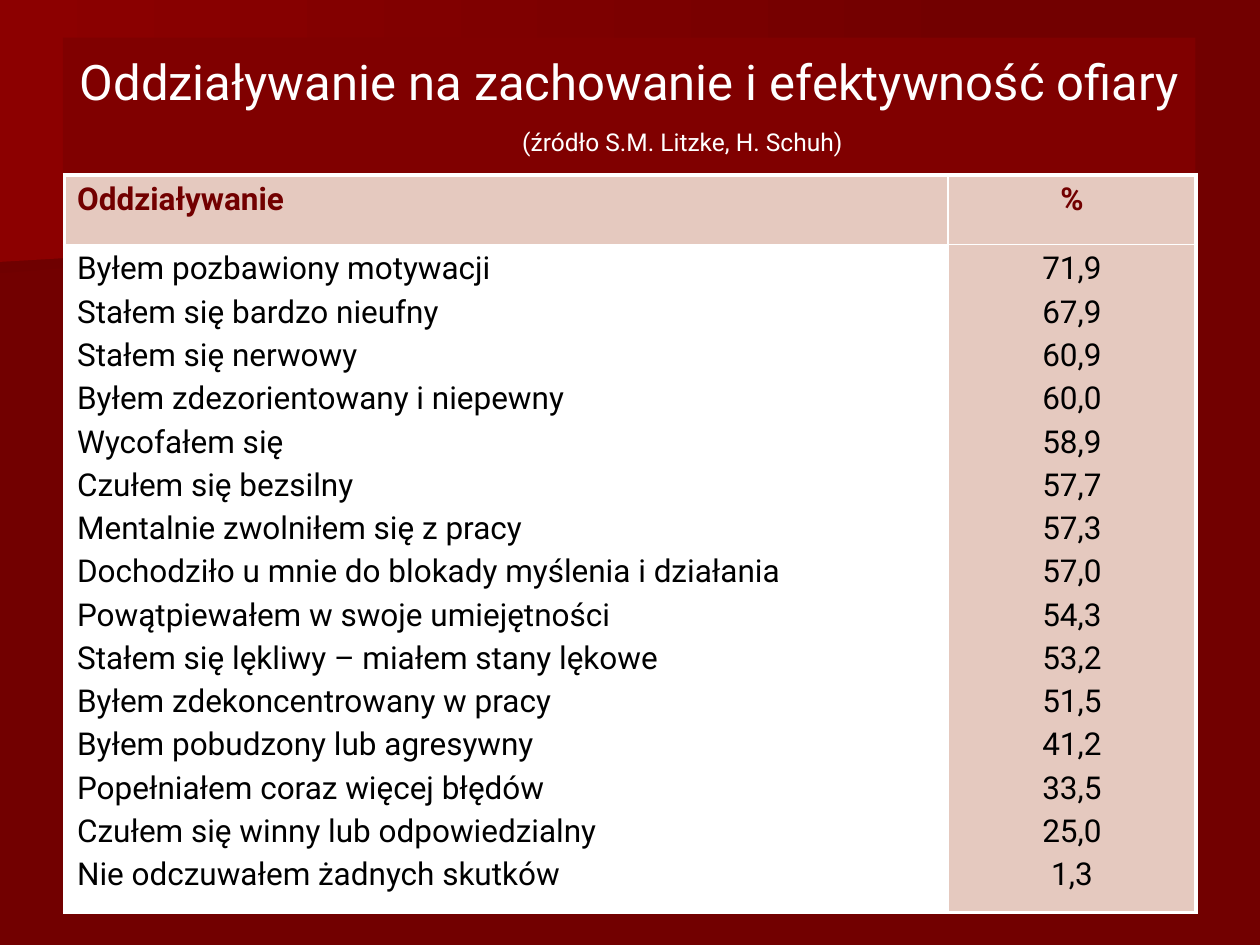
"""Build a slide with a table of effects on a victim's behaviour."""
from dataclasses import dataclass

from lxml import etree
from pptx import Presentation
from pptx.dml.color import RGBColor
from pptx.enum.text import MSO_ANCHOR, PP_ALIGN
from pptx.oxml.ns import qn
from pptx.util import Cm, Pt

LEFT, CENTER = PP_ALIGN.LEFT, PP_ALIGN.CENTER
MIDDLE = MSO_ANCHOR.MIDDLE
FONT = "Roboto"
WHITE, BLACK, DARK_RED, TITLE_RED, PINK = "FFFFFF", "000000", "720000", "800000", "E5C9BF"
THIN, THICK = 1, 2.25
BLANK_LAYOUT = 6
COLUMN_WIDTHS = (17.81, 5.0)
ROW_HEIGHTS = (1.4, 13.2)

EFFECTS = (
    ("Byłem pozbawiony motywacji", "71,9"),
    ("Stałem się bardzo nieufny", "67,9"),
    ("Stałem się nerwowy", "60,9"),
    ("Byłem zdezorientowany i niepewny", "60,0"),
    ("Wycofałem się", "58,9"),
    ("Czułem się bezsilny", "57,7"),
    ("Mentalnie zwolniłem się z pracy", "57,3"),
    ("Dochodziło u mnie do blokady myślenia i działania", "57,0"),
    ("Powątpiewałem w swoje umiejętności", "54,3"),
    ("Stałem się lękliwy – miałem stany lękowe", "53,2"),
    ("Byłem zdekoncentrowany w pracy", "51,5"),
    ("Byłem pobudzony lub agresywny", "41,2"),
    ("Popełniałem coraz więcej błędów", "33,5"),
    ("Czułem się winny lub odpowiedzialny", "25,0"),
    ("Nie odczuwałem żadnych skutków", "1,3"),
)


@dataclass(frozen=True)
class Band:
    """A background outline in centimetres with a horizontal gradient."""
    points: tuple
    colors: tuple


@dataclass(frozen=True)
class TextStyle:
    """The look of one paragraph."""
    size: float
    color: str
    bold: bool = False
    align: PP_ALIGN = CENTER
    before: float = 0


@dataclass(frozen=True)
class CellContent:
    """The lines, style and fill of one table cell."""
    lines: tuple
    style: TextStyle
    fill: str


BANDS = (
    Band(((0, 2.57), (19.79, 2.57), (19.76, 3.89), (0, 5.51)), ("6F0000", DARK_RED)),
    Band(((0, 0), (20.12, 0), (20.12, 4.11), (0, 5.28)), ("8C0000", DARK_RED)),
)


def rgb(value: str) -> RGBColor:
    """Turn a hex string into a colour."""
    return RGBColor.from_string(value)


def set_attributes(target, values: dict) -> None:
    """Set every named value on the target."""
    for name, value in values.items():
        setattr(target, name, value)


def fill_solid(fill, color: str) -> None:
    """Give a fill one plain colour."""
    fill.solid()
    fill.fore_color.rgb = rgb(color)


def write_paragraph(paragraph, text: str, style: TextStyle) -> None:
    """Write one styled run into a paragraph."""
    set_attributes(paragraph, {"alignment": style.align, "space_before": Pt(style.before)})
    run = paragraph.add_run()
    run.text = text
    set_attributes(run.font, {"name": FONT, "size": Pt(style.size), "bold": style.bold})
    run.font.color.rgb = rgb(style.color)


def draw_band(slide, band: Band) -> None:
    """Draw one gradient band of the background."""
    start, *rest = [(Cm(x), Cm(y)) for x, y in band.points]
    builder = slide.shapes.build_freeform(*start)
    builder.add_line_segments(rest, close=True)
    shape = builder.convert_to_shape()
    shape.shadow.inherit = False
    shape.line.fill.background()
    shape.fill.gradient()
    shape.fill.gradient_angle = 0
    for stop, color in zip(shape.fill.gradient_stops, band.colors):
        stop.color.rgb = rgb(color)


def draw_title(slide) -> None:
    """Draw the title panel with its source line."""
    box = slide.shapes.add_textbox(Cm(1.27), Cm(0.76), Cm(22.83), Cm(2.77))
    fill_solid(box.fill, TITLE_RED)
    frame = box.text_frame
    set_attributes(frame, {
        "word_wrap": True, "vertical_anchor": MIDDLE, "margin_left": Cm(0.2),
        "margin_right": Cm(0.2), "margin_bottom": Cm(0.21),
    })
    write_paragraph(frame.paragraphs[0], "Oddziaływanie na zachowanie i efektywność ofiary",
                    TextStyle(28, WHITE))
    source = frame.add_paragraph()
    write_paragraph(source, "(źródło S.M. Litzke, H. Schuh)", TextStyle(14, WHITE, before=9.3))
    source._p.get_or_add_pPr().set("marL", str(Cm(2.15)))


def add_border(cell, side: str, width: float) -> None:
    """Add a white border to one side of a cell."""
    line = etree.SubElement(cell._tc.get_or_add_tcPr(), qn(f"a:ln{side}"), w=str(Pt(width)))
    solid = etree.SubElement(line, qn("a:solidFill"))
    etree.SubElement(solid, qn("a:srgbClr"), val=WHITE)


def fill_cell(cell, content: CellContent, widths: dict) -> None:
    """Write a cell's lines and set its borders and fill."""
    for side, width in widths.items():
        add_border(cell, side, width)
    fill_solid(cell.fill, content.fill)
    frame = cell.text_frame
    for index, text in enumerate(content.lines):
        paragraph = frame.add_paragraph() if index else frame.paragraphs[0]
        write_paragraph(paragraph, text, content.style)


def draw_table(slide) -> None:
    """Draw the table of effects and percentages."""
    names, shares = zip(*EFFECTS)
    header = {"size": 18, "color": DARK_RED, "bold": True, "before": 3.6}
    body = {"size": 18, "color": BLACK, "before": 3.6}
    rows = (
        (CellContent(("Oddziaływanie",), TextStyle(align=LEFT, **header), PINK),
         CellContent(("%",), TextStyle(**header), PINK)),
        (CellContent(names, TextStyle(align=LEFT, **body), WHITE),
         CellContent(shares, TextStyle(**body), PINK)),
    )
    table = slide.shapes.add_table(len(rows), len(COLUMN_WIDTHS), Cm(1.3), Cm(3.53),
                                   Cm(sum(COLUMN_WIDTHS)), Cm(sum(ROW_HEIGHTS))).table
    set_attributes(table, {"first_row": False, "horz_banding": False})
    for column, width in zip(table.columns, COLUMN_WIDTHS):
        column.width = Cm(width)
    for row, height in zip(table.rows, ROW_HEIGHTS):
        row.height = Cm(height)
    for row_index, row in enumerate(rows):
        for column_index, content in enumerate(row):
            outer = {
                "L": column_index == 0, "R": column_index == len(row) - 1,
                "T": row_index == 0, "B": row_index == len(rows) - 1,
            }
            widths = {side: THICK if edge else THIN for side, edge in outer.items()}
            fill_cell(table.cell(row_index, column_index), content, widths)


def main() -> None:
    """Build and save the presentation."""
    presentation = Presentation()
    set_attributes(presentation, {"slide_width": Cm(25.4), "slide_height": Cm(19.05)})
    slide = presentation.slides.add_slide(presentation.slide_layouts[BLANK_LAYOUT])
    fill_solid(slide.background.fill, DARK_RED)
    for band in BANDS:
        draw_band(slide, band)
    draw_title(slide)
    draw_table(slide)
    presentation.save("out.pptx")


if __name__ == "__main__":
    main()
